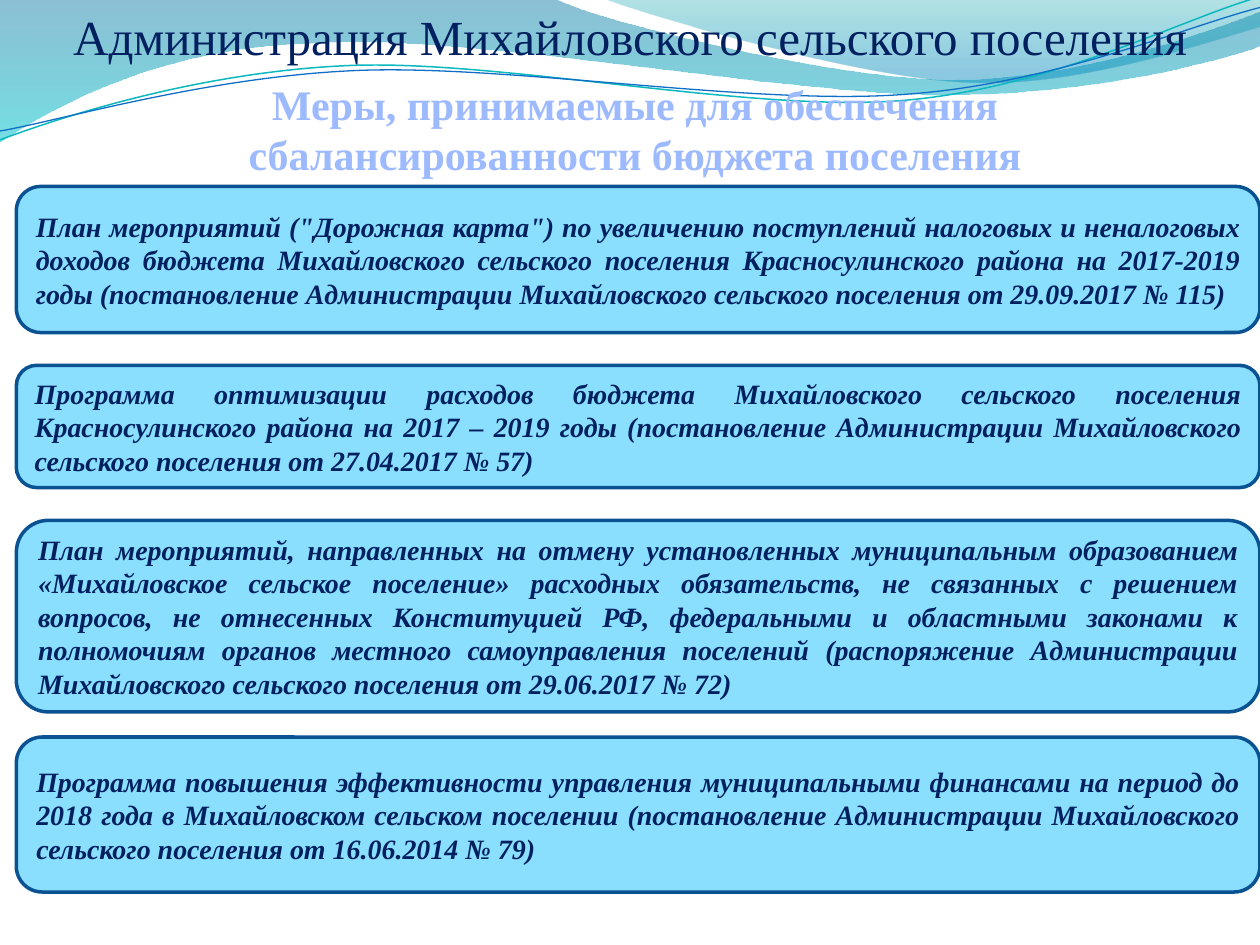
from math import cos, radians, sin

from lxml import etree
from pptx import Presentation
from pptx.dml.color import RGBColor
from pptx.enum.shapes import MSO_SHAPE
from pptx.enum.text import MSO_ANCHOR, PP_ALIGN
from pptx.oxml.ns import qn
from pptx.util import Inches, Pt

NAVY = RGBColor(0x00, 0x20, 0x60)
PERIWINKLE = RGBColor(0x9E, 0xBA, 0xFF)
SKY = RGBColor(0x8A, 0xDF, 0xFF)
BORDER = RGBColor(0x0B, 0x52, 0x92)
TEAL_LINE = RGBColor(0x0A, 0xB8, 0xBF)
BLUE_LINE = RGBColor(0x0F, 0x6F, 0xC6)
OCEAN = RGBColor(0x00, 0x74, 0xA1)
AQUA = RGBColor(0x00, 0xC6, 0xCF)
TEAL = RGBColor(0x00, 0xA1, 0xA9)
AZURE = RGBColor(0x00, 0x8B, 0xBF)
FONT = "Times New Roman"

# Headings: text, (left, top, width, height), size, bold, colour
HEADINGS = [
    ("Меры, принимаемые для обеспечения сбалансированности бюджета поселения",
     (0.47, 0.57, 9.14, 0.91), 24, True, PERIWINKLE),
    ("Администрация Михайловского сельского поселения",
     (0, 0, 10, 0.57), 28, False, NAVY),
]

# Measures: top, height, text
MEASURES = [
    (1.48, 1.16, "План мероприятий (\"Дорожная карта\") по увеличению поступлений "
     "налоговых и неналоговых доходов бюджета Михайловского сельского поселения "
     "Красносулинского района на 2017-2019 годы (постановление Администрации "
     "Михайловского сельского поселения от 29.09.2017 № 115)"),
    (2.9, 0.97, "Программа оптимизации расходов бюджета Михайловского сельского "
     "поселения Красносулинского района на 2017 – 2019 годы (постановление "
     "Администрации Михайловского сельского поселения от 27.04.2017 № 57)"),
    (4.13, 1.52, "План мероприятий, направленных на отмену установленных "
     "муниципальным образованием «Михайловское сельское поселение» расходных "
     "обязательств, не связанных с решением вопросов, не отнесенных Конституцией РФ, "
     "федеральными и областными законами к полномочиям органов местного "
     "самоуправления поселений (распоряжение Администрации Михайловского сельского "
     "поселения от 29.06.2017 № 72)"),
    (5.85, 1.23, "Программа повышения эффективности управления муниципальными "
     "финансами на период до 2018 года в Михайловском сельском поселении "
     "(постановление Администрации Михайловского сельского поселения "
     "от 16.06.2014 № 79)"),
]
MEASURE_LEFT, MEASURE_WIDTH = 0.13, 9.87

# Wave outlines: a pair is a straight step, six numbers are a Bezier step
# Bands: outline, gradient stops (position, colour, opacity in percent)
BANDS = [
    ([(0, 0), (4.4, -0.01), (4.76, 0.17, 6.64, 0.63, 7.58, 0.63),
      (8.53, 0.63, 9.58, 0.26, 10, 0.09), (10.01, 0.36),
      (9.83, 0.44, 8.7, 0.76, 7.46, 0.75), (6.22, 0.75, 3.82, 0.28, 2.57, 0.34),
      (1.29, 0.36, 0.46, 0.83, -0.01, 1.13)],
     [(0, OCEAN, 45), (1, AQUA, 55)]),
    ([(4.79, -0.01), (5.09, 0.11, 6.82, 0.62, 7.69, 0.65),
      (8.56, 0.69, 9.61, 0.32, 10, 0.21), (10, 0)],
     [(0, TEAL, 30), (0.8, AZURE, 45)]),
]
# Strands: outline as seen after turning, centre, colour, line width
STRANDS = [
    ([(0, 1.11), (0.48, 0.93, 1.58, 0.57, 2.77, 0.52),
      (3.95, 0.47, 5.93, 0.89, 7.13, 0.8), (8.33, 0.71, 9.38, 0.15, 9.98, -0.02)],
     (4.99, 0.58), TEAL_LINE, 0.85),
    ([(0, 1.04), (0.47, 0.96, 1.64, 0.61, 2.83, 0.56),
      (4.03, 0.51, 5.97, 0.84, 7.17, 0.75), (8.36, 0.67, 9.41, 0.21, 10, 0.06)],
     (5, 0.59), BLUE_LINE, 0.75),
]
STRAND_TURN = 357.3


def turned(step, centre, degrees):
    """Turn every point of a step clockwise about the centre."""
    (cx, cy), angle = centre, radians(degrees)
    result = []
    for x, y in zip(step[::2], step[1::2]):
        dx, dy = x - cx, y - cy
        result += [cx + dx * cos(angle) - dy * sin(angle),
                   cy + dx * sin(angle) + dy * cos(angle)]
    return tuple(result)


def add_wave(slide, outline, close):
    points = [(Inches(x), Inches(y)) for step in outline
              for x, y in zip(step[::2], step[1::2])]
    builder = slide.shapes.build_freeform(*points[0])
    builder.add_line_segments(points[1:], close=close)
    wave = builder.convert_to_shape()
    wave.shadow.inherit = False
    # Join each three points of a Bezier step into one curve
    segments = iter(list(wave._element.spPr.iter(qn("a:lnTo"))))
    for step in outline[1:]:
        first = next(segments)
        if len(step) == 6:
            first.tag = qn("a:cubicBezTo")
            for _ in range(2):
                control = next(segments)
                first.append(control[0])
                control.getparent().remove(control)
    return wave


def write(shape, text, size, color, align, bold, italic=False):
    frame = shape.text_frame
    frame.word_wrap = True
    paragraph = frame.paragraphs[0]
    paragraph.text = text
    paragraph.alignment = align
    font = paragraph.font
    font.name, font.size = FONT, Pt(size)
    font.bold, font.italic = bold, italic
    font.color.rgb = color


prs = Presentation()
prs.slide_width, prs.slide_height = Inches(10), Inches(7.5)
slide = prs.slides.add_slide(prs.slide_layouts[6])

# Translucent wave bands, shaded from top to bottom
for outline, stops in BANDS:
    band = add_wave(slide, outline, close=True)
    band.line.fill.background()
    band.fill.gradient()
    band.fill.gradient_angle = 270
    for stop, (position, color, _) in zip(band.fill.gradient_stops, stops):
        stop.position = position
        stop.color.rgb = color
    for node, (_, _, opacity) in zip(band._element.spPr.iter(qn("a:srgbClr")), stops):
        etree.SubElement(node, qn("a:alpha")).set("val", str(opacity * 1000))

# Thin wave strands
for outline, centre, color, width in STRANDS:
    level = [turned(step, centre, -STRAND_TURN) for step in outline]
    strand = add_wave(slide, level, close=False)
    strand.rotation = STRAND_TURN
    strand.fill.background()
    strand.line.color.rgb = color
    strand.line.width = Pt(width)

# Headings
for text, place, size, bold, color in HEADINGS:
    heading = slide.shapes.add_textbox(*map(Inches, place))
    write(heading, text, size, color, PP_ALIGN.CENTER, bold)

# Measure panels
for top, height, text in MEASURES:
    panel = slide.shapes.add_shape(
        MSO_SHAPE.ROUNDED_RECTANGLE,
        *map(Inches, (MEASURE_LEFT, top, MEASURE_WIDTH, height)))
    panel.shadow.inherit = False
    panel.fill.solid()
    panel.fill.fore_color.rgb = SKY
    panel.line.color.rgb = BORDER
    panel.line.width = Pt(2)
    panel.text_frame.vertical_anchor = MSO_ANCHOR.MIDDLE
    write(panel, text, 16, NAVY, PP_ALIGN.JUSTIFY, bold=True, italic=True)

prs.save("out.pptx")
